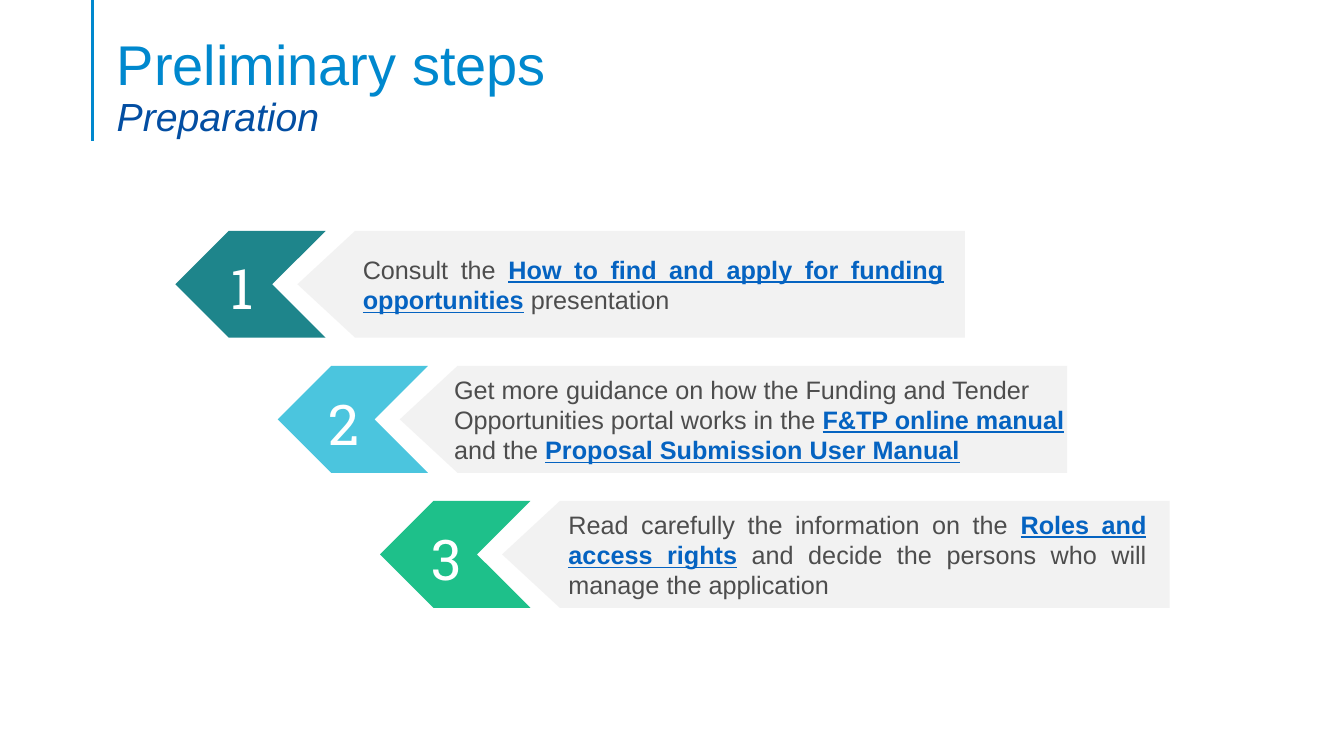
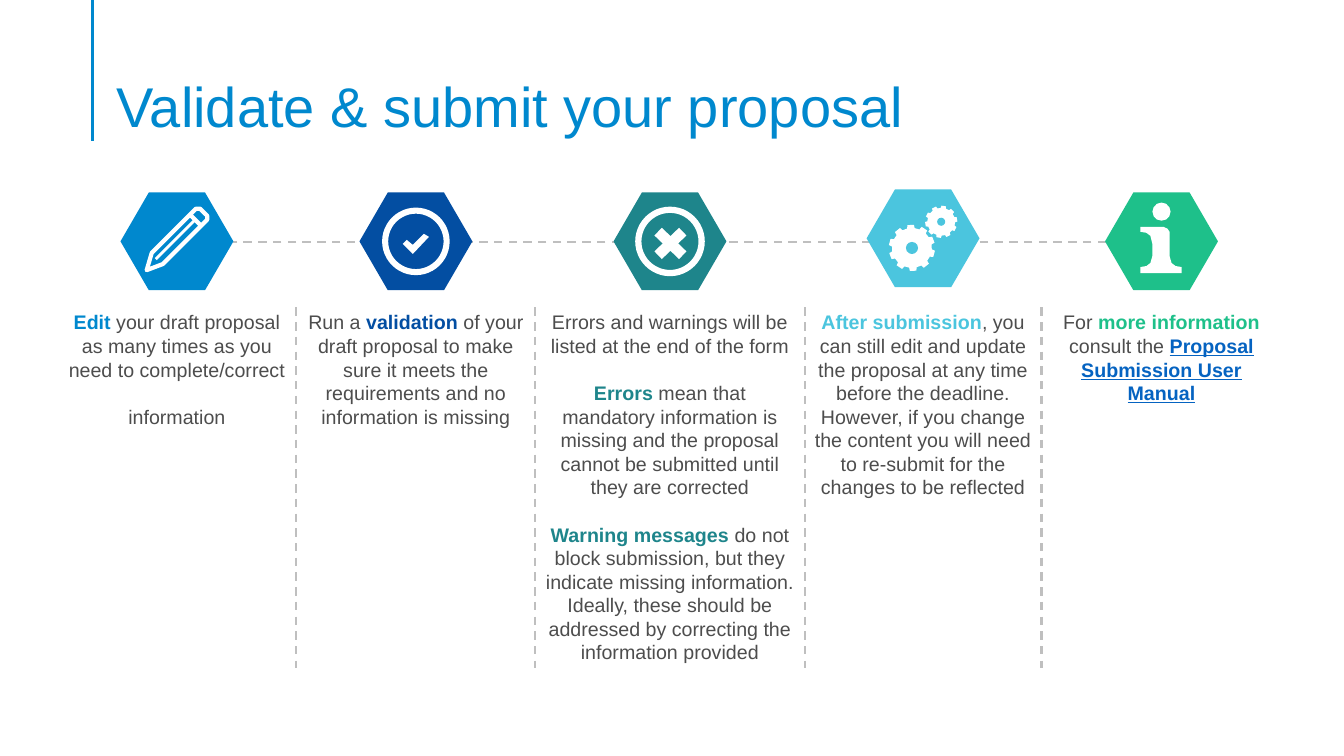
from math import cos, pi, radians, sin

from pptx import Presentation
from pptx.dml.color import RGBColor
from pptx.enum.dml import MSO_LINE
from pptx.enum.shapes import MSO_CONNECTOR, MSO_SHAPE
from pptx.enum.text import MSO_ANCHOR, PP_ALIGN
from pptx.oxml.ns import qn
from pptx.util import Inches, Pt

COLOURS = {
    "blue": "0088CE", "navy": "034EA2", "teal": "1E858B", "sky": "4BC5DE",
    "green": "1EC08A", "link": "0563C1", "text": "4D4D4D", "panel": "F2F2F2",
    "rule": "BFBFBF", "white": "FFFFFF",
}
HEX_WIDTH, HEX_HEIGHT = 1.12, 0.97


def rgb(name):
    return RGBColor.from_string(COLOURS[name])


def add_text(page, box, paras, size=18, colour="text", font="Arial", align=PP_ALIGN.LEFT,
             anchor=MSO_ANCHOR.TOP, insets=(0.1, 0.05, 0.1, 0.05), spacing=1.0, gap=0, wrap=True):
    frame = page.shapes.add_textbox(*map(Inches, box)).text_frame
    frame.word_wrap = wrap
    frame.vertical_anchor = anchor
    frame.margin_left, frame.margin_top, frame.margin_right, frame.margin_bottom = map(Inches, insets)
    for index, spans in enumerate(paras):
        para = frame.add_paragraph() if index else frame.paragraphs[0]
        para.alignment = align
        para.line_spacing = spacing
        if index and gap:
            para.space_before = Pt(gap)
        for item in spans:
            words, accent = (item, None) if isinstance(item, str) else item
            span = para.add_run()
            span.text = words
            span.font.name = font
            span.font.size = Pt(size)
            span.font.bold = accent is not None
            span.font.underline = accent == "link"
            span.font.color.rgb = rgb(accent or colour)
    return frame


def paint(shape, fill=None, line=None, width=1):
    shape.shadow.inherit = False
    if fill:
        shape.fill.solid()
        shape.fill.fore_color.rgb = rgb(fill)
    else:
        shape.fill.background()
    if line:
        shape.line.color.rgb = rgb(line)
        shape.line.width = Pt(width)
    else:
        shape.line.fill.background()
    return shape


def add_preset(page, kind, box, fill, adjust=None):
    shape = paint(page.shapes.add_shape(kind, *map(Inches, box)), fill)
    if adjust is not None:
        shape.adjustments[0] = adjust
    return shape


def add_outline(page, left, top, points, **look):
    corners = [(Inches(left + x), Inches(top + y)) for x, y in points]
    builder = page.shapes.build_freeform(*corners[0], scale=1.0)
    builder.add_line_segments(corners[1:], close=True)
    return paint(builder.convert_to_shape(), **look)


def add_line(page, start, end, colour="rule", width=1.5, dash=None):
    line = page.shapes.add_connector(MSO_CONNECTOR.STRAIGHT, *map(Inches, start + end))
    line.line.color.rgb = rgb(colour)
    line.line.width = Pt(width)
    if dash:
        line.line.dash_style = dash
    properties = line._element.spPr
    properties.append(properties.makeelement(qn("a:effectLst"), {}))


def add_page(deck, title, subtitle=None):
    page = deck.slides.add_slide(deck.slide_layouts[6])
    add_line(page, (0.92, 0), (0.92, 1.4), "blue", 2.25)
    paras = [[title], [subtitle]] if subtitle else [[title]]
    frame = add_text(page, (1.06, 0.33, 11.5, 1.06), paras, size=40, colour="blue",
                     anchor=MSO_ANCHOR.BOTTOM, insets=(0.1, 0.05, 0.1, 0), spacing=0.9)
    if subtitle:
        font = frame.paragraphs[1].runs[0].font
        font.size, font.italic = Pt(28), True
        font.color.rgb = rgb("navy")
    return page


def add_step(page, left, top, number, colour, spans, indent, width, align):
    height = 1.06
    chevron = add_preset(page, MSO_SHAPE.CHEVRON, (left, top, 1.49, height), colour, 0.5)
    panel = add_preset(page, MSO_SHAPE.PENTAGON, (left + 1.21, top, 6.62, height), "panel", 0.54)
    chevron.rotation = panel.rotation = 180
    add_text(page, (left + indent, top, width, height), [spans], align=align, anchor=MSO_ANCHOR.MIDDLE)
    add_text(page, (left + 0.41, top + 0.26, 0.5, 0.54), [[number]], size=40, colour="white",
             font="Roboto Slab", align=PP_ALIGN.CENTER, anchor=MSO_ANCHOR.MIDDLE,
             insets=(0, 0, 0, 0), spacing=1.1, wrap=False)


def add_ring(page, left, top, size):
    box = (left + (HEX_WIDTH - size) / 2, top + (HEX_HEIGHT - size) / 2, size, size)
    add_preset(page, MSO_SHAPE.DONUT, box, "white", 0.09)


def draw_pencil(page, left, top, colour):
    body = [(0.26, 0.77), (0.31, 0.6), (0.75, 0.16), (0.79, 0.16), (0.86, 0.23), (0.86, 0.27), (0.42, 0.71)]
    add_outline(page, left, top, body, line="white", width=3)
    add_line(page, (left + 0.69, top + 0.22), (left + 0.79, top + 0.32), "white", 3)
    add_line(page, (left + 0.35, top + 0.66), (left + 0.73, top + 0.28), "white", 2)


def draw_check(page, left, top, colour):
    add_ring(page, left, top, 0.67)
    tick = [(0.53, 0.61), (0.43, 0.51), (0.47, 0.47), (0.53, 0.52), (0.64, 0.41), (0.69, 0.44)]
    add_outline(page, left, top, tick, fill="white")


def draw_cross(page, left, top, colour):
    add_ring(page, left, top, 0.69)
    add_preset(page, MSO_SHAPE.MATH_MULTIPLY, (left + 0.33, top + 0.28, 0.47, 0.45), "white")


def add_gear(page, x, y, radius, hole, turn, colour):
    teeth = 10
    points = []
    for tooth in range(teeth):
        middle = radians(turn) + tooth * 2 * pi / teeth
        for offset, reach in ((-11, 0.86), (-8, 1), (8, 1), (11, 0.86)):
            angle = middle + radians(offset)
            points.append((radius * reach * cos(angle), radius * reach * sin(angle)))
    add_outline(page, x, y, points, fill="white")
    add_preset(page, MSO_SHAPE.OVAL, (x - hole, y - hole, 2 * hole, 2 * hole), colour)


def draw_gears(page, left, top, colour):
    add_gear(page, left + 0.45, top + 0.58, 0.23, 0.06, -93, colour)
    add_gear(page, left + 0.74, top + 0.32, 0.16, 0.04, -81, colour)


def draw_info(page, left, top, colour):
    add_preset(page, MSO_SHAPE.OVAL, (left + 0.47, top + 0.1, 0.18, 0.18), "white")
    stem = [(0.35, 0.34), (0.58, 0.34), (0.62, 0.36), (0.64, 0.39), (0.64, 0.63), (0.66, 0.7),
            (0.7, 0.73), (0.76, 0.74), (0.76, 0.8), (0.35, 0.8), (0.35, 0.74), (0.41, 0.73),
            (0.45, 0.7), (0.47, 0.63), (0.47, 0.51), (0.45, 0.43), (0.41, 0.4), (0.35, 0.39)]
    add_outline(page, left, top, stem, fill="white")


def add_stage(page, left, width, icon_top, colour, draw_icon, paras):
    icon_left = left + (width - HEX_WIDTH) / 2
    add_preset(page, MSO_SHAPE.HEXAGON, (icon_left, icon_top, HEX_WIDTH, HEX_HEIGHT), colour, 0.29)
    draw_icon(page, icon_left, icon_top, colour)
    add_text(page, (left, 3.03, width, 3.64), paras, size=14, align=PP_ALIGN.CENTER, gap=17)


def build_preparation(deck):
    page = add_page(deck, "Preliminary steps", "Preparation")
    steps = [
        ("teal", ["Consult the ", ("How to find and apply for funding opportunities", "link"),
                  " presentation"], 1.76, 5.96, PP_ALIGN.JUSTIFY),
        ("sky", ["Get more guidance on how the Funding and Tender Opportunities portal works in the ",
                 ("F&TP online manual", "link"), " and the ",
                 ("Proposal Submission User Manual", "link")], 1.65, 6.32, PP_ALIGN.LEFT),
        ("green", ["Read carefully the information on the ", ("Roles and access rights", "link"),
                   " and decide the persons who will manage the application"],
         1.77, 5.93, PP_ALIGN.JUSTIFY),
    ]
    for index, step in enumerate(steps):
        add_step(page, 1.74 + 1.015 * index, 2.29 + 1.34 * index, str(index + 1), *step)


def build_submission(deck):
    page = add_page(deck, "Validate & submit your proposal")
    add_line(page, (10.97, 2.4), (2.31, 2.4), dash=MSO_LINE.DASH)
    edges = [0.57, 2.94, 5.31, 7.98, 10.33, 12.71]
    stages = [
        (1.91, "blue", draw_pencil, [
            [("Edit", "blue"), " your draft proposal as many times as you need to complete/correct"],
            ["information"]]),
        (1.91, "navy", draw_check, [
            ["Run a ", ("validation", "navy"),
             " of your draft proposal to make sure it meets the requirements and no information is missing"]]),
        (1.91, "teal", draw_cross, [
            ["Errors and warnings will be listed at the end of the form"],
            [("Errors", "teal"), " mean that mandatory information is missing and the proposal "
             "cannot be submitted until they are corrected"],
            [("Warning messages", "teal"), " do not block submission, but they indicate missing information. "
             "Ideally, these should be addressed by correcting the information provided"]]),
        (1.88, "sky", draw_gears, [
            [("After submission", "sky"), ", you can still edit and update the proposal at any time before "
             "the deadline. However, if you change the content you will need to re-submit for the changes "
             "to be reflected"]]),
        (1.91, "green", draw_info, [
            ["For ", ("more information ", "green"), "consult the ",
             ("Proposal Submission User Manual", "link")]]),
    ]
    for left, right, stage in zip(edges, edges[1:], stages):
        add_stage(page, left, right - left, *stage)
    for edge in edges[1:-1]:
        add_line(page, (edge, 3.05), (edge, 6.63), dash=MSO_LINE.DASH)


def main():
    deck = Presentation()
    deck.slide_width, deck.slide_height = Inches(13.33), Inches(7.5)
    build_preparation(deck)
    build_submission(deck)
    deck.save("out.pptx")


if __name__ == "__main__":
    main()
